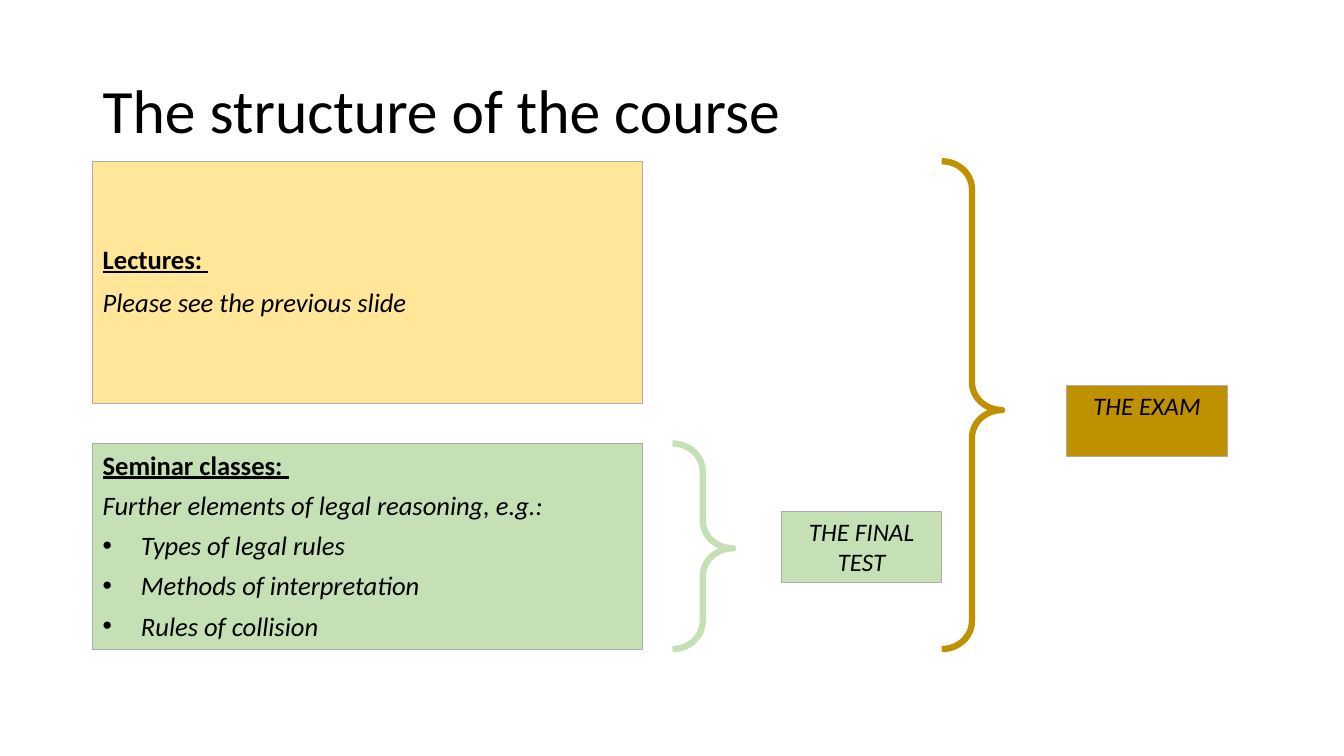
from dataclasses import dataclass

from lxml import etree
from pptx import Presentation
from pptx import util as u
from pptx.dml.color import RGBColor
from pptx.enum import shapes, text
from pptx.oxml import ns

COLORS = {
    "ink": "000000",
    "border": "AFABAB",
    "lecture": "FFE699",
    "seminar": "C5E0B4",
    "exam": "BF9000",
}
HEADING = {"bold": True, "underline": True}
DETAIL = {"italic": True}
PLAIN = {}
TIGHT = {"line_spacing": 0.9}
SPACED = {"line_spacing": 0.9, "space_before": u.Pt(10)}
LISTED = {"space_after": u.Pt(6)}
CENTRED = {"alignment": text.PP_ALIGN.CENTER}
INDENT = 0.38
LEFT, LECTURE_TOP, SEMINAR_TOP = 0.92, 1.6, 4.4
SEMINAR_HEIGHT = 2.04
COURSE_HEIGHT = SEMINAR_TOP + SEMINAR_HEIGHT - LECTURE_TOP


@dataclass
class Line:
    words: str
    font: dict
    layout: dict
    bullet: bool = False


@dataclass
class Panel:
    box: tuple[float, float, float, float]
    lines: list[Line]
    size: float
    fill: str = ""
    anchor: text.MSO_ANCHOR = text.MSO_ANCHOR.TOP


@dataclass
class Brace:
    box: tuple[float, float, float, float]
    color: str


TOPICS = ["Types of legal rules", "Methods of interpretation", "Rules of collision"]

PANELS = [
    Panel((LEFT, 0.4, 11.5, 1.45),
          [Line("The structure of the course", PLAIN, TIGHT)],
          44, anchor=text.MSO_ANCHOR.MIDDLE),
    Panel((LEFT, LECTURE_TOP, 5.45, 2.4),
          [Line("Lectures: ", HEADING, TIGHT),
           Line("Please see the previous slide", DETAIL, SPACED)],
          19, "lecture", text.MSO_ANCHOR.MIDDLE),
    Panel((LEFT, SEMINAR_TOP, 5.45, SEMINAR_HEIGHT),
          [Line("Seminar classes: ", HEADING, LISTED),
           Line("Further elements of legal reasoning, e.g.:", DETAIL, LISTED),
           *[Line(topic, DETAIL, LISTED, True) for topic in TOPICS]],
          19, "seminar"),
    Panel((7.75, 5.07, 1.59, 0.71),
          [Line("THE FINAL TEST", DETAIL, CENTRED)], 18, "seminar"),
    Panel((10.58, 3.82, 1.59, 0.71),
          [Line("THE EXAM", DETAIL, CENTRED)], 18, "exam"),
]

BRACES = [
    Brace((6.67, SEMINAR_TOP, 0.6, SEMINAR_HEIGHT), "seminar"),
    Brace((9.34, LECTURE_TOP, 0.6, COURSE_HEIGHT), "exam"),
]


def rgb(name: str) -> RGBColor:
    return RGBColor.from_string(COLORS[name])


def apply(target, values: dict) -> None:
    for key, value in values.items():
        setattr(target, key, value)


def add_bullet(paragraph) -> None:
    properties = paragraph._p.get_or_add_pPr()
    properties.set("marL", str(u.Inches(INDENT)))
    properties.set("indent", str(-u.Inches(INDENT)))
    etree.SubElement(properties, ns.qn("a:buFont")).set("typeface", "Arial")
    etree.SubElement(properties, ns.qn("a:buChar")).set("char", "•")


def draw_panel(slide, panel: Panel) -> None:
    box = [u.Inches(length) for length in panel.box]
    if panel.fill:
        shape = slide.shapes.add_shape(shapes.MSO_SHAPE.RECTANGLE, *box)
        shape.shadow.inherit = False
        shape.fill.solid()
        shape.fill.fore_color.rgb = rgb(panel.fill)
        shape.line.color.rgb = rgb("border")
        shape.line.width = u.Pt(0.75)
    else:
        shape = slide.shapes.add_textbox(*box)
    frame = shape.text_frame
    apply(frame, {"word_wrap": True, "vertical_anchor": panel.anchor})
    for index, line in enumerate(panel.lines):
        paragraph = frame.add_paragraph() if index else frame.paragraphs[0]
        if line.bullet:
            add_bullet(paragraph)
        apply(paragraph, {"alignment": text.PP_ALIGN.LEFT, **line.layout})
        run = paragraph.add_run()
        run.text = line.words
        apply(run.font, {"name": "Calibri", "size": u.Pt(panel.size), **line.font})
        run.font.color.rgb = rgb("ink")


def draw_brace(slide, brace: Brace) -> None:
    box = [u.Inches(length) for length in brace.box]
    shape = slide.shapes.add_shape(shapes.MSO_SHAPE.RIGHT_BRACE, *box)
    shape.shadow.inherit = False
    shape.fill.background()
    shape.line.color.rgb = rgb(brace.color)
    shape.line.width = u.Pt(4.5)
    shape.adjustments[0] = 0.46
    shape.adjustments[1] = 0.51


def main() -> None:
    deck = Presentation()
    apply(deck, {"slide_width": u.Inches(13.33), "slide_height": u.Inches(7.5)})
    slide = deck.slides.add_slide(deck.slide_layouts[6])
    for panel in PANELS:
        draw_panel(slide, panel)
    for brace in BRACES:
        draw_brace(slide, brace)
    deck.save("out.pptx")


if __name__ == "__main__":
    main()
